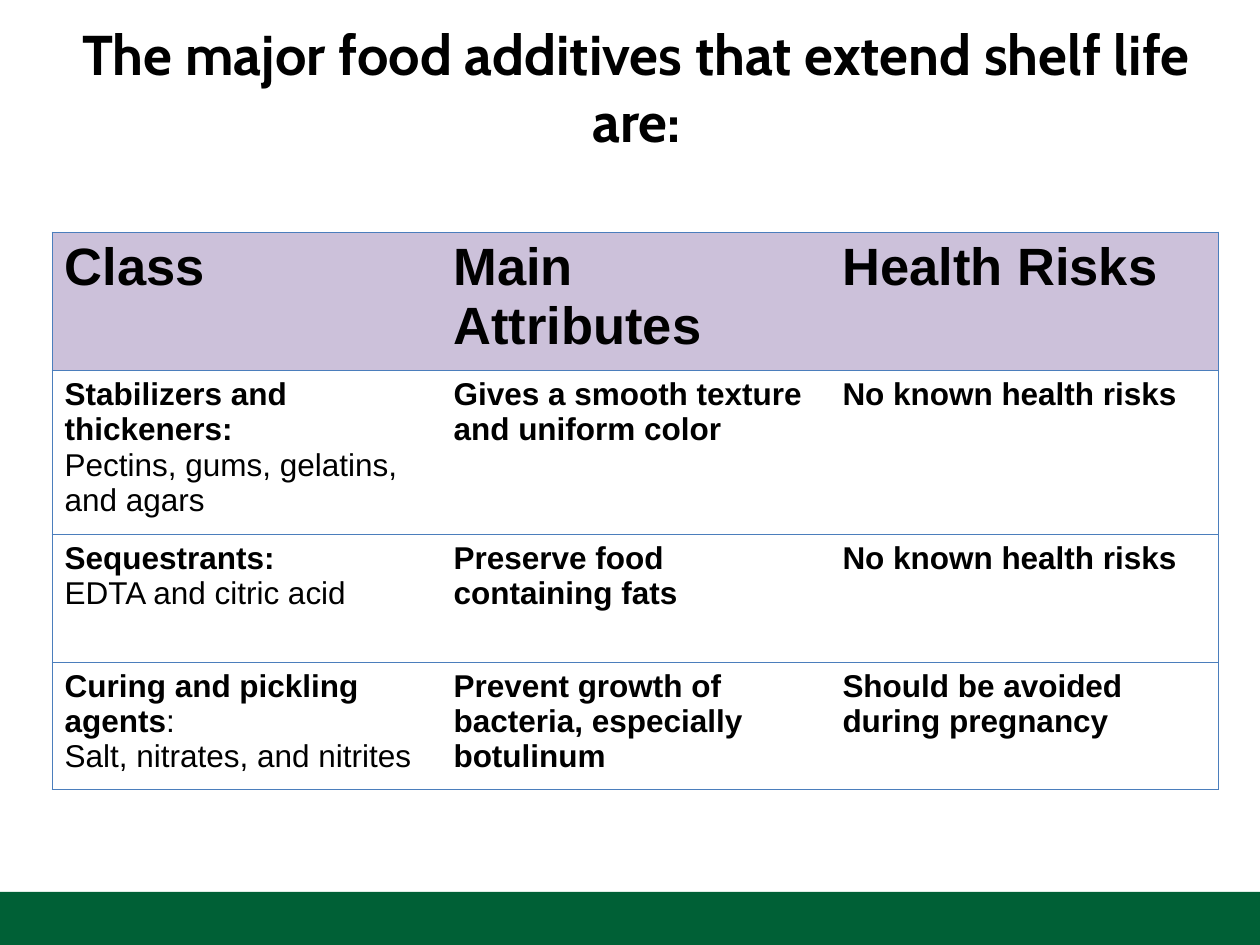
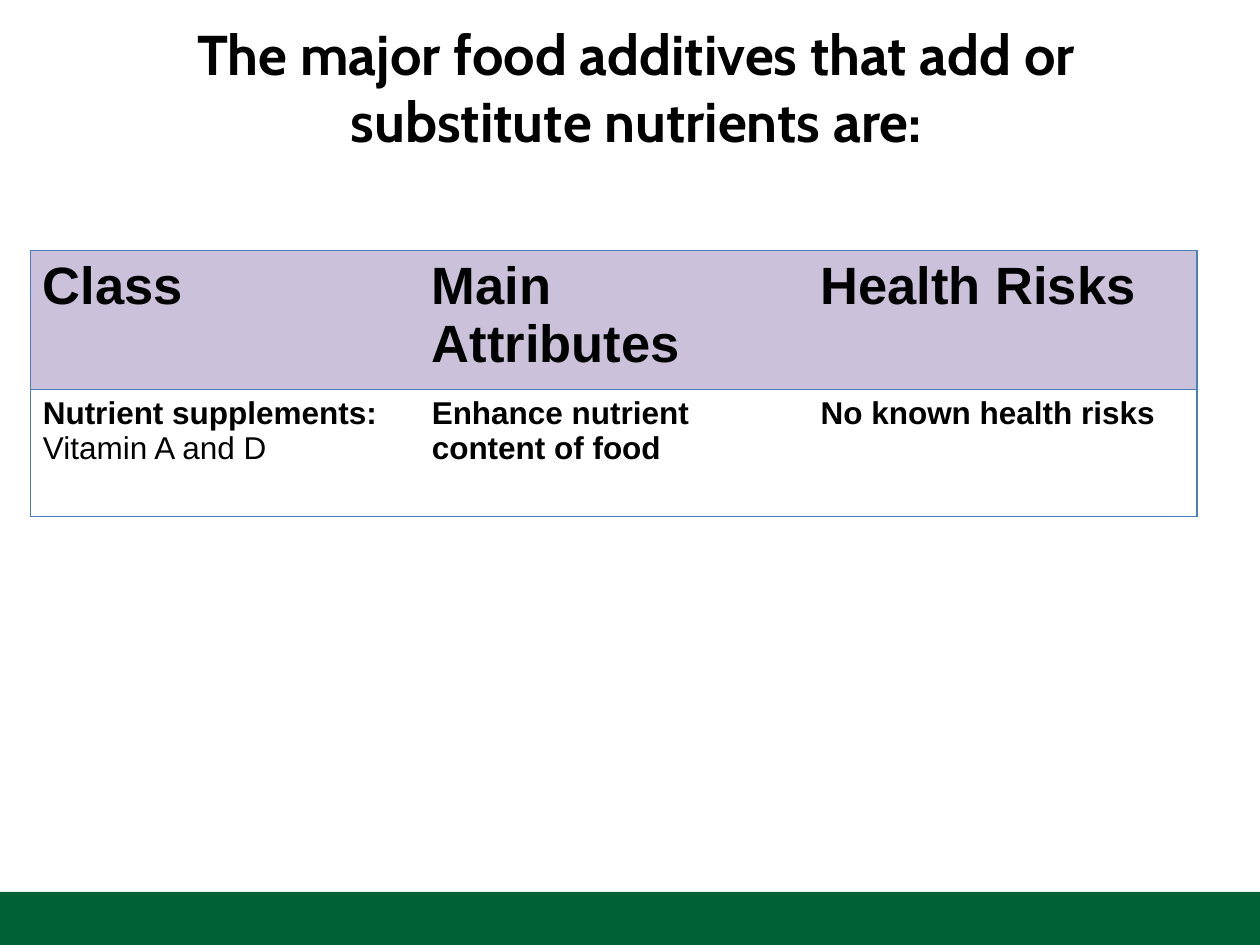
from lxml import etree
from pptx import Presentation
from pptx.dml.color import RGBColor
from pptx.enum.shapes import MSO_SHAPE
from pptx.enum.text import MSO_ANCHOR, PP_ALIGN
from pptx.oxml.ns import qn
from pptx.util import Cm, Pt

RECT = MSO_SHAPE.RECTANGLE
MIDDLE = MSO_ANCHOR.MIDDLE
CENTER = PP_ALIGN.CENTER

GREEN = "006036"
LILAC = "CCC1DA"
BLUE = "4B7EBC"
BLACK = "000000"
TITLE_FONT = "Cabin"
BODY_FONT = "Arial"
SLIDE_W, SLIDE_H = 25.4, 19.05
BAND_H = 1.07
TITLE_BOX = (1.27, 0.15, 22.86, 3.18)
COL_W = 7.84
BODY_ROW_H = 2.57
HEADERS = ["Class", "Main Attributes", "Health Risks"]

SLIDES = [
    {
        "title": "The major food additives that extend shelf life are:",
        "table_at": (1.05, 4.68),
        "header_h": 2.11,
        "rows": [
            ("Stabilizers and thickeners:", "Pectins, gums, gelatins, and agars",
             "Gives a smooth texture and uniform color", "No known health risks"),
            ("Sequestrants:", "EDTA and citric acid",
             "Preserve food containing fats", "No known health risks"),
            ("Curing and pickling agents", ":", "Salt, nitrates, and nitrites",
             "Prevent growth of bacteria, especially botulinum",
             "Should be avoided during pregnancy"),
        ],
    },
    {
        "title": "The major food additives that add or substitute nutrients are:",
        "table_at": (0.61, 5.05),
        "header_h": 2.06,
        "rows": [
            ("Nutrient supplements:", "Vitamin A and D",
             "Enhance nutrient content of food", "No known health risks"),
        ],
    },
]


def rgb(value):
    """Turn a hex string into a colour."""
    return RGBColor.from_string(value)


def style(p, size, font, bold=True):
    """Set the font of a whole paragraph."""
    p.font.size = Pt(size)
    p.font.name = font
    p.font.bold = bold
    p.font.color.rgb = rgb(BLACK)


def add_band(slide):
    """Draw the green band along the foot of the slide."""
    sp = slide.shapes.add_shape(RECT, 0, Cm(SLIDE_H - BAND_H), Cm(SLIDE_W), Cm(BAND_H))
    sp.shadow.inherit = False
    sp.fill.solid()
    sp.fill.fore_color.rgb = rgb(GREEN)
    sp.line.fill.background()


def add_title(slide, text, box):
    """Write the centred title in its box."""
    tf = slide.shapes.add_textbox(*map(Cm, box)).text_frame
    tf.word_wrap = True
    tf.vertical_anchor = MIDDLE
    tf.margin_left, tf.margin_right = Cm(0.36), Cm(0.1)
    p = tf.paragraphs[0]
    p.text = text
    p.alignment = CENTER
    style(p, 32, TITLE_FONT)


def set_borders(cell, sides):
    """Rule the given sides of a cell and clear the others."""
    tcPr = cell._tc.get_or_add_tcPr()
    for i, side in enumerate("LRTB"):
        ln = etree.Element(qn(f"a:ln{side}"), w=str(Pt(0.75)))
        if side in sides:
            fill = etree.SubElement(ln, qn("a:solidFill"))
            etree.SubElement(fill, qn("a:srgbClr"), val=BLUE)
        else:
            etree.SubElement(ln, qn("a:noFill"))
        tcPr.insert(i, ln)


def fill_cell(cell, paragraphs, size):
    """Write paragraphs of (text, bold) runs into a cell."""
    tf = cell.text_frame
    for i, runs in enumerate(paragraphs):
        p = tf.add_paragraph() if i else tf.paragraphs[0]
        style(p, size, BODY_FONT, runs[0][1])
        for text, bold in runs:
            r = p.add_run()
            r.text = text
            if bold != runs[0][1]:
                r.font.bold = bold


def body_cells(row):
    """Split a row into its class, attribute and risk paragraphs."""
    *class_parts, detail, attribute, risk = row
    name = [(text, i == 0) for i, text in enumerate(class_parts)]
    return [[name, [(detail, False)]], [[(attribute, True)]], [[(risk, True)]]]


def add_additive_table(slide, at, header_h, rows):
    """Build the table of additives with its top left corner at the given point."""
    cells = [[[[(text, True)]] for text in HEADERS]] + [body_cells(row) for row in rows]
    heights = [header_h] + [BODY_ROW_H] * len(rows)
    last = len(HEADERS) - 1
    table = slide.shapes.add_table(
        len(cells), len(HEADERS), Cm(at[0]), Cm(at[1]),
        Cm(COL_W * len(HEADERS)), Cm(sum(heights))).table
    table.first_row = table.horz_banding = False
    for column in table.columns:
        column.width = Cm(COL_W)
    for r, (height, row) in enumerate(zip(heights, cells)):
        table.rows[r].height = Cm(height)
        for c, paragraphs in enumerate(row):
            cell = table.cell(r, c)
            if r == 0:
                cell.fill.solid()
                cell.fill.fore_color.rgb = rgb(LILAC)
            else:
                cell.fill.background()
            fill_cell(cell, paragraphs, 18 if r else 30)
            set_borders(cell, "TB" + "L" * (c == 0) + "R" * (c == last))


def add_additive_slide(prs, content):
    """Add one slide with title, table and band."""
    slide = prs.slides.add_slide(prs.slide_layouts[6])
    add_band(slide)
    add_title(slide, content["title"], TITLE_BOX)
    add_additive_table(slide, content["table_at"], content["header_h"], content["rows"])


def main():
    """Build and save the presentation."""
    prs = Presentation()
    prs.slide_width, prs.slide_height = Cm(SLIDE_W), Cm(SLIDE_H)
    for content in SLIDES:
        add_additive_slide(prs, content)
    prs.save("out.pptx")


if __name__ == "__main__":
    main()
